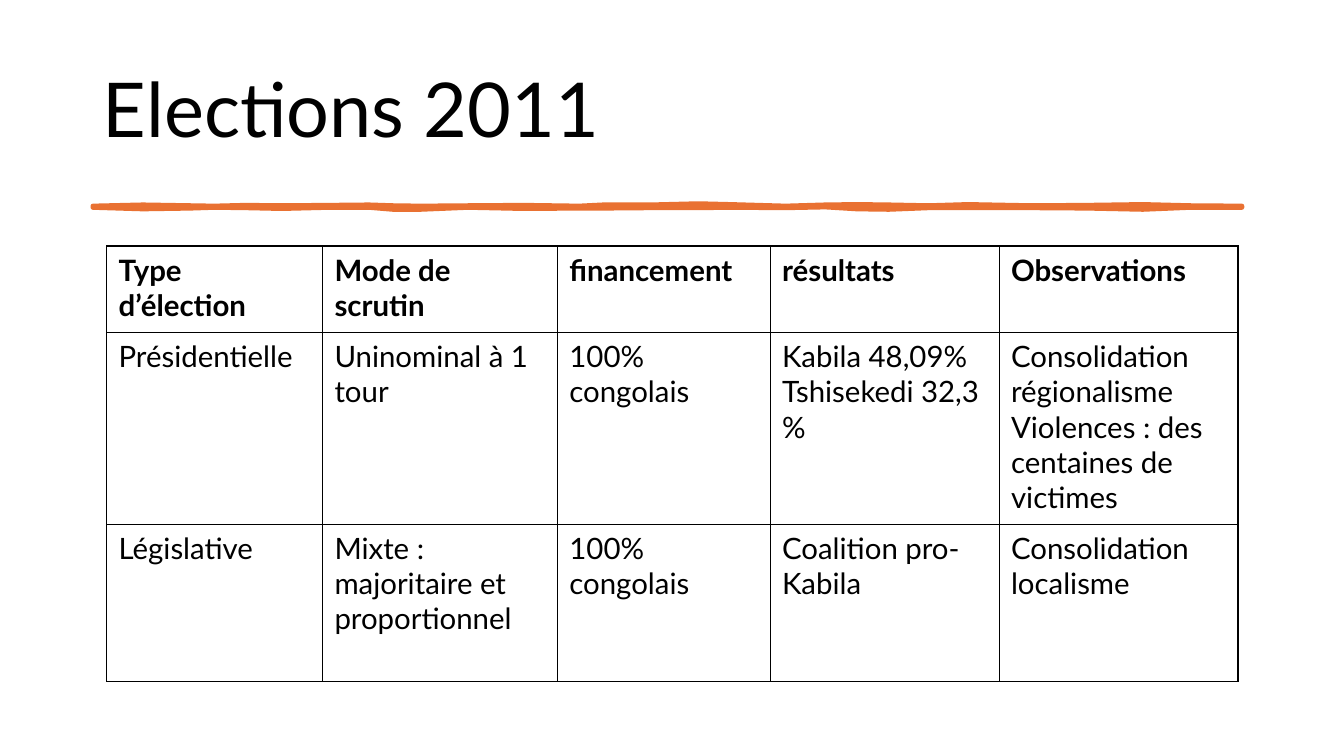
from lxml import etree
from pptx import Presentation
from pptx import util as u
from pptx.dml.color import RGBColor
from pptx.enum import text as t
from pptx.oxml import ns

# Content: each cell is a list of paragraphs
TITLE = "Elections 2011"
ROWS = [
    [["Type d’élection"], ["Mode de scrutin"], ["financement"],
     ["résultats"], ["Observations"]],
    [["Présidentielle"], ["Uninominal à 1 tour"], ["100% congolais"],
     ["Kabila 48,09%", "Tshisekedi 32,3 %"],
     ["Consolidation régionalisme",
      "Violences : des centaines de victimes"]],
    [["Législative"], ["Mixte : majoritaire et proportionnel"],
     ["100% congolais"], ["Coalition pro-Kabila"],
     ["Consolidation localisme"]],
]
WIDTHS = [5.44, 5.92, 5.36, 5.77, 6.02]
HEIGHTS = [2.18, 4.83, 3.96]

# Brush stroke: x, upper edge, lower edge, in cm
STROKE = [
    (2.34, 5.19, 5.23), (3.6, 5.16, 5.27), (4.8, 5.18, 5.25),
    (5.4, 5.19, 5.23), (6.2, 5.17, 5.24), (7.1, 5.18, 5.26),
    (8.3, 5.17, 5.23), (9.3, 5.16, 5.23), (9.9, 5.18, 5.28),
    (10.6, 5.19, 5.28), (11.8, 5.18, 5.23), (13.2, 5.17, 5.26),
    (14.6, 5.19, 5.25), (15.2, 5.16, 5.25), (16.4, 5.16, 5.24),
    (17.6, 5.13, 5.24), (18.4, 5.15, 5.23), (19.8, 5.19, 5.24),
    (20.8, 5.16, 5.22), (21.6, 5.15, 5.27), (22.4, 5.16, 5.28),
    (23.4, 5.18, 5.24), (24.4, 5.15, 5.24), (26, 5.18, 5.24),
    (27.4, 5.17, 5.25), (28.8, 5.15, 5.28), (30, 5.18, 5.23),
    (31.3, 5.19, 5.23),
]

FONT = "Lato"
BLACK = RGBColor(0, 0, 0)
ORANGE = RGBColor(0xE9, 0x71, 0x32)


def add_run(para, words, size, bold=False):
    run = para.add_run()
    run.text = words
    font = run.font
    font.name, font.size, font.bold = FONT, u.Pt(size), bold
    font.color.rgb = BLACK


def add_edges(cell):
    props = cell._tc.get_or_add_tcPr()
    for spot, side in enumerate(("lnL", "lnR", "lnT", "lnB")):
        line = etree.Element(ns.qn("a:" + side), w=str(u.Pt(1)))
        fill = etree.SubElement(line, ns.qn("a:solidFill"))
        etree.SubElement(fill, ns.qn("a:srgbClr"), val=str(BLACK))
        props.insert(spot, line)


def add_title(slide):
    box = slide.shapes.title
    box.left, box.top = u.Cm(2.34), u.Cm(1.02)
    box.width, box.height = u.Cm(29.21), u.Cm(3.68)
    frame = box.text_frame
    frame.auto_size = t.MSO_AUTO_SIZE.NONE
    frame.vertical_anchor = t.MSO_ANCHOR.MIDDLE
    para = frame.paragraphs[0]
    para.alignment = t.PP_ALIGN.LEFT
    para.line_spacing = 0.9
    add_run(para, TITLE, 54)


def add_stroke(slide):
    upper = [(u.Cm(x), u.Cm(top)) for x, top, _ in STROKE]
    lower = [(u.Cm(x), u.Cm(low)) for x, _, low in reversed(STROKE)]
    pen = slide.shapes.build_freeform(*upper[0])
    pen.add_line_segments(upper[1:] + lower, close=True)
    shape = pen.convert_to_shape()
    shape.shadow.inherit = False
    shape.fill.solid()
    shape.fill.fore_color.rgb = ORANGE
    shape.line.color.rgb = ORANGE
    shape.line.width = u.Pt(3.25)
    etree.SubElement(shape.line._get_or_add_ln(), ns.qn("a:round"))


def add_grid(slide):
    grid = slide.shapes.add_table(
        len(HEIGHTS), len(WIDTHS), u.Cm(2.69), u.Cm(6.2),
        u.Cm(sum(WIDTHS)), u.Cm(sum(HEIGHTS))).table
    grid.first_row = grid.horz_banding = False
    for col, width in zip(grid.columns, WIDTHS):
        col.width = u.Cm(width)
    for row, height in zip(grid.rows, HEIGHTS):
        row.height = u.Cm(height)
    for r, row in enumerate(ROWS):
        for c, paras in enumerate(row):
            cell = grid.cell(r, c)
            cell.fill.background()
            cell.margin_left = cell.margin_right = u.Cm(0.3)
            cell.margin_top = cell.margin_bottom = u.Cm(0.15)
            add_edges(cell)
            frame = cell.text_frame
            for n, words in enumerate(paras):
                para = frame.add_paragraph() if n else frame.paragraphs[0]
                add_run(para, words, 21, bold=r == 0)


def main():
    deck = Presentation()
    deck.slide_width, deck.slide_height = u.Cm(33.87), u.Cm(19.05)
    slide = deck.slides.add_slide(deck.slide_layouts[5])
    add_title(slide)
    add_stroke(slide)
    add_grid(slide)
    deck.save("out.pptx")


if __name__ == "__main__":
    main()
